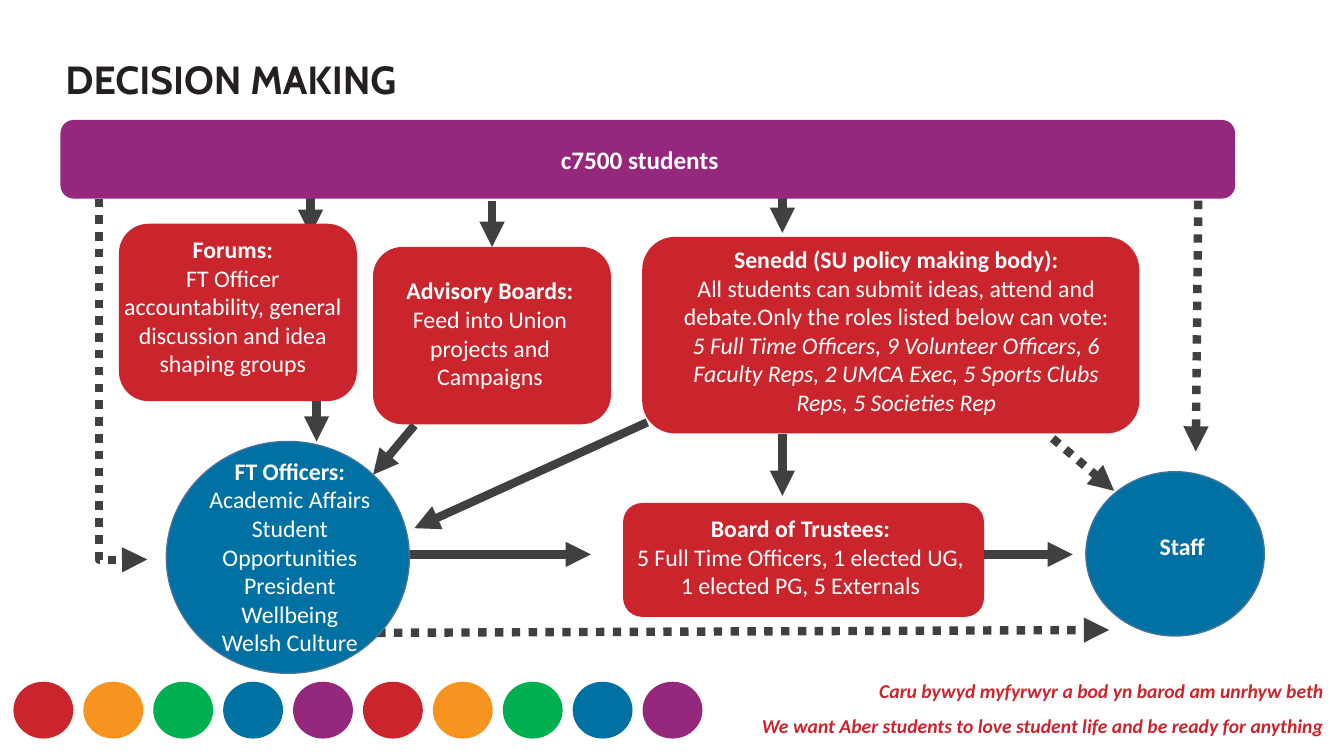
from lxml.etree import SubElement as Sub
from pptx import Presentation
from pptx.dml.color import RGBColor as RGB
from pptx.enum.dml import MSO_LINE as Dash
from pptx.enum.shapes import MSO_CONNECTOR as Link, MSO_SHAPE as Kind
from pptx.enum.text import PP_ALIGN as Align
from pptx.oxml.ns import qn
from pptx.util import Inches, Pt

RED = RGB(0xCA, 0x25, 0x2C)
ORANGE = RGB(0xF7, 0x94, 0x1F)
GREEN = RGB(0x00, 0xAF, 0x50)
BLUE = RGB(0x01, 0x71, 0xA3)
PURPLE = RGB(0x95, 0x27, 0x7D)
EDGE = RGB(0x43, 0x73, 0x9E)
GREY = RGB(0x40, 0x40, 0x40)
INK = RGB(0x24, 0x20, 0x21)
WHITE = RGB(0xFF, 0xFF, 0xFF)

PLAIN = {"name": "Calibri", "size": Pt(17), "bold": False, "italic": False}
BOLD = PLAIN | {"bold": True}
SLANT = PLAIN | {"italic": True}
BAR = BOLD | {"size": Pt(18)}
MOTTO = BOLD | {"size": Pt(14), "italic": True}
TITLE = BOLD | {"name": "Cabin", "size": Pt(28)}

deck = Presentation()
deck.slide_width, deck.slide_height = Inches(13.33), Inches(7.5)
slide = deck.slides.add_slide(deck.slide_layouts[6])
shapes = slide.shapes


def write(area, lines, color=WHITE, align=Align.CENTER, space=1.0):
    frame = shapes.add_textbox(*map(Inches, area)).text_frame
    frame.word_wrap = True
    for index, (words, style) in enumerate(lines):
        para = frame.add_paragraph() if index else frame.paragraphs[0]
        para.alignment = align
        para.line_spacing = space
        run = para.add_run()
        run.text = words
        run.font.color.rgb = color
        for key, value in style.items():
            setattr(run.font, key, value)


def draw(kind, area, fill, edge=None):
    shape = shapes.add_shape(kind, *map(Inches, area))
    shape.shadow.inherit = False
    shape.fill.solid()
    shape.fill.fore_color.rgb = fill
    if edge is None:
        shape.line.fill.background()
    else:
        shape.line.color.rgb = edge
        shape.line.width = Pt(1)
    return shape


write((6.7, 6.57, 6.53, 0.77), [
    ("Caru bywyd myfyrwyr a bod yn barod am unrhyw beth", MOTTO),
    ("We want Aber students to love student life and be ready for anything", MOTTO),
], RED, Align.RIGHT, 1.5)
for spot, color in enumerate([RED, ORANGE, GREEN, BLUE, PURPLE] * 2):
    draw(Kind.OVAL, (0.14 + spot * 6.24 / 9, 6.77, 0.58, 0.55), color, color)

arrows = []
for start, end, dotted in [
    ((3.14, 3.58), (3.14, 4.38), False),
    ((7.76, 4.31), (7.76, 4.92), False),
    ((6.42, 4.19), (4.11, 5.24), False),
    ((4.05, 5.5), (5.86, 5.5), False),
    ((9.76, 5.5), (10.64, 5.5), False),
    ((3.08, 1.4), (3.08, 2.33), False),
    ((7.76, 1.38), (7.76, 2.31), False),
    ((10.44, 4.35), (11.05, 4.87), True),
    ((11.89, 1.49), (11.86, 4.48), True),
    ((3.24, 6.28), (11, 6.25), True),
    ((4.11, 4.22), (3.7, 4.71), False),
]:
    arrow = shapes.add_connector(Link.STRAIGHT, *map(Inches, start + end))
    arrows.append((arrow, dotted))

elbow = shapes.add_connector(Link.ELBOW, *map(Inches, (3.01, 3.52, -0.57, 4)))
props = elbow._element.spPr
props.find(qn("a:xfrm")).set("rot", "16200000")
geom = props.find(qn("a:prstGeom"))
guides = geom.find(qn("a:avLst"))
if guides is None:
    guides = Sub(geom, qn("a:avLst"))
Sub(guides, qn("a:gd"), name="adj1", fmla="val 100100")
arrows.append((elbow, True))

draw(Kind.OVAL, (10.77, 4.68, 1.77, 1.63), BLUE, EDGE)
write((10.65, 5.23, 2.15, 0.39), [("Staff", BOLD)])

draw(Kind.OVAL, (1.65, 4.38, 2.41, 2.3), BLUE, EDGE)
write((1.77, 4.48, 2.21, 2.39), [
    ("FT Officers:", BOLD),
    ("Academic Affairs", PLAIN),
    ("Student Opportunities", PLAIN),
    ("President", PLAIN),
    ("Wellbeing", PLAIN),
    ("Welsh Culture", PLAIN),
])

cards = {}
for name, area, fill, place, lines in [
    ("senedd", (6.37, 2.35, 4.93, 1.95), RED, (6.54, 2.38, 4.7, 1.82), [
        ("Senedd (SU policy making body):", BOLD),
        ("All students can submit ideas, attend and debate.Only the roles "
         "listed below can vote:", PLAIN),
        ("5 Full Time Officers, 9 Volunteer Officers, 6 Faculty Reps, "
         "2 UMCA Exec, 5 Sports Clubs Reps, 5 Societies Rep", SLANT),
    ]),
    ("board", (6.18, 4.99, 3.58, 1.13), RED, (6.15, 5.05, 3.58, 0.96), [
        ("Board of Trustees:", BOLD),
        ("5 Full Time Officers, 1 elected UG, 1 elected PG, 5 Externals", PLAIN),
    ]),
    ("students", (0.6, 1.19, 11.65, 0.78), PURPLE, (0.86, 1.38, 10.97, 0.4), [
        ("c7500 students", BAR),
    ]),
    ("forums", (1.18, 2.22, 2.36, 1.76), RED, (1.13, 2.28, 2.36, 1.53), [
        ("Forums:", BOLD),
        ("FT Officer accountability, general discussion and idea shaping groups",
         PLAIN),
    ]),
    ("advice", (3.7, 2.45, 2.36, 1.76), RED, (3.68, 2.69, 2.36, 1.25), [
        ("Advisory Boards:", BOLD),
        ("Feed into Union projects and Campaigns", PLAIN),
    ]),
]:
    cards[name] = draw(Kind.ROUNDED_RECTANGLE, area, fill)
    write(place, lines)

feed = shapes.add_connector(Link.STRAIGHT, *map(Inches, (4.88, 1.99, 4.88, 2.45)))
feed.end_connect(cards["advice"], 0)
arrows.append((feed, False))

for arrow, dotted in arrows:
    arrow.line.color.rgb = GREY
    arrow.line.width = Pt(6)
    if dotted:
        arrow.line.dash_style = Dash.ROUND_DOT
    props = arrow._element.spPr
    Sub(props.find(qn("a:ln")), qn("a:tailEnd"), type="triangle")
    Sub(props, qn("a:effectLst"))

write((0.55, 0.5, 12.25, 0.57), [("DECISION MAKING", TITLE)], INK, Align.LEFT)

deck.save("out.pptx")
